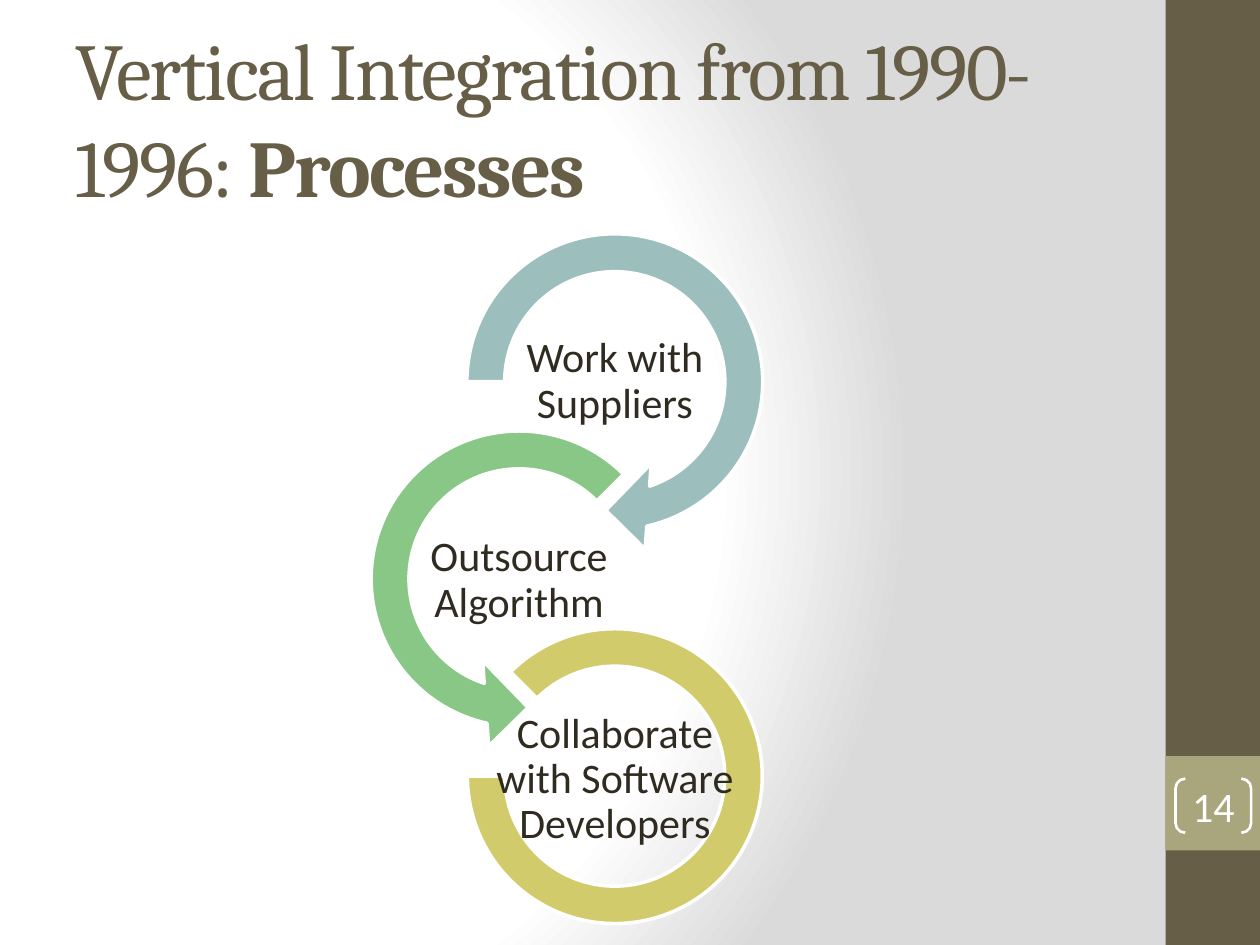
from pptx import Presentation, util as u
from pptx.dml.color import RGBColor
from pptx.enum import shapes, text
from pptx.oxml import parse_xml
from pptx.oxml.ns import qn, nsdecls

W, H = 10, 7.5
BAR = 9.25
KIND = shapes.MSO_SHAPE
TITLE = [("Vertical Integration from 1990-1996: ", False), ("Processes", True)]
RINGS = [
    ("Work with Suppliers", KIND.CIRCULAR_ARROW, "9CBEBD", 4.88, 2.73, 1.52,
     (0.11, 11.42, 45, 108, 0.125)),
    ("Outsource Algorithm", KIND.LEFT_CIRCULAR_ARROW, "88C785", 4.12, 2.73, 1.52,
     (0.11, 11.42, 63, 189, 0.125)),
    ("Collaborate with Software Developers", KIND.BLOCK_ARC, "D2CB6C", 4.88, 2.34, 1.99,
     (135, 108, 0.127)),
]
RING_TOP, RING_STEP = 3.03, 1.565
TEXT_TOP, TEXT_STEP, TEXT_H = 2.65, 1.58, 0.76
STOPS = [(0, "FFFFFF"), (75, "FFFFFF"), (100, "DADADA")]


def color(code):
    return RGBColor.from_string(code)


def paint(slide):
    slide.background.fill.solid()
    stops = "".join(
        f'<a:gs pos="{at * 1000}"><a:srgbClr val="{code}"/></a:gs>' for at, code in STOPS)
    grad = parse_xml(
        f'<a:gradFill {nsdecls("a")} rotWithShape="1"><a:gsLst>{stops}</a:gsLst>'
        '<a:path path="circle"><a:fillToRect l="20000" t="50000" r="100000" b="50000"/>'
        '</a:path></a:gradFill>')
    solid = slide.background._cSld.find(".//" + qn("a:solidFill"))
    solid.getparent().replace(solid, grad)


def draw(slide, kind, box, fill=None, line=None, width=2, adj=()):
    shape = slide.shapes.add_shape(kind, *map(u.Inches, box))
    shape.shadow.inherit = False
    if fill:
        shape.fill.solid()
        shape.fill.fore_color.rgb = color(fill)
    else:
        shape.fill.background()
    if line:
        shape.line.color.rgb = color(line)
        shape.line.width = u.Pt(width)
    else:
        shape.line.fill.background()
    for i, val in enumerate(adj):
        shape.adjustments[i] = val
    return shape


def write(shape, runs, size, font, code, inset=None, center=True, space=None, track=0):
    frame = shape.text_frame
    frame.word_wrap = True
    frame.vertical_anchor = text.MSO_ANCHOR.MIDDLE
    if inset is not None:
        frame.margin_left = frame.margin_right = u.Inches(inset)
        frame.margin_top = frame.margin_bottom = u.Inches(inset)
    para = frame.paragraphs[0]
    para.alignment = text.PP_ALIGN.CENTER if center else text.PP_ALIGN.LEFT
    if space:
        para.line_spacing = space
    for words, bold in runs:
        run = para.add_run()
        run.text = words
        run.font.size = u.Pt(size)
        run.font.name = font
        run.font.bold = bold
        run.font.color.rgb = color(code)
        if track:
            run.font._element.set("spc", str(track * 100))


def label(slide, box):
    return slide.shapes.add_textbox(*map(u.Inches, box))


def main():
    deck = Presentation()
    deck.slide_width, deck.slide_height = u.Inches(W), u.Inches(H)
    slide = deck.slides.add_slide(deck.slide_layouts[6])
    paint(slide)

    draw(slide, KIND.RECTANGLE, (BAR, 0, W - BAR, H), "675E47")
    draw(slide, KIND.RECTANGLE, (BAR, 0.8 * H, W - BAR, 0.1 * H), "A9A57C")
    write(label(slide, (0.5, 0.3, 8.67, 1.25)), TITLE, 46, "Cambria", "675E47",
          center=False, track=-1)
    page = draw(slide, KIND.DOUBLE_BRACKET, (9.33, 6.18, 0.6, 0.43),
                line="FFFFFF", width=1.5, adj=(0.18,))
    write(page, [("14", False)], 24, "Calibri", "FFFFFF", inset=0)

    for i, (words, kind, fill, mid, size, wide, adj) in enumerate(RINGS):
        y = RING_TOP + i * RING_STEP
        draw(slide, kind, (mid - size / 2, y - size / 2, size, size), fill, "FFFFFF", adj=adj)
        box = (mid - wide / 2, TEXT_TOP + i * TEXT_STEP, wide, TEXT_H)
        write(label(slide, box), [(words, False)], 24, "Calibri", "2F2B20",
              inset=0.02, space=0.9)

    deck.save("out.pptx")


if __name__ == "__main__":
    main()
